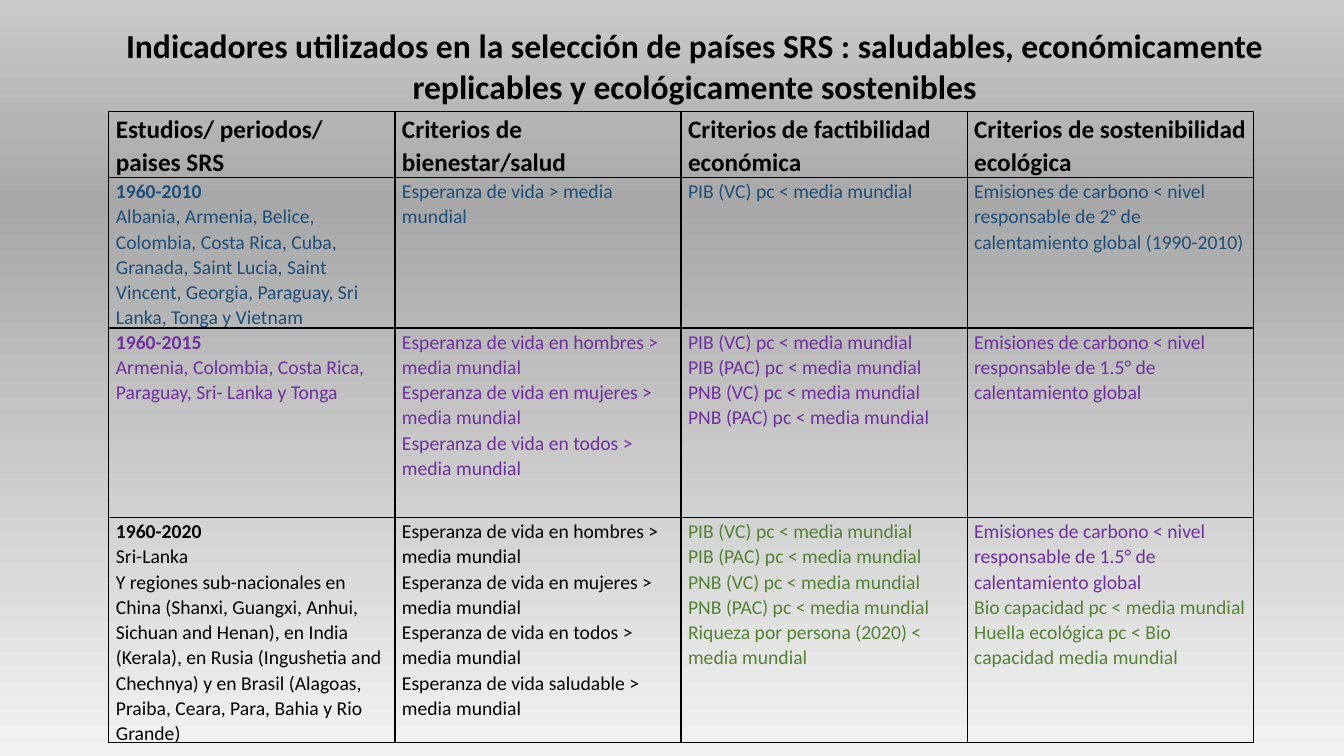
from copy import deepcopy

from lxml.etree import SubElement
from pptx import Presentation
from pptx.dml.color import RGBColor
from pptx.enum.text import MSO_AUTO_SIZE, PP_ALIGN
from pptx.oxml.ns import qn
from pptx.util import Inches, Pt

BLACK, BLUE, PURPLE, GREEN = "000000", "1F4E79", "7030A0", "548235"


def color(hex_string):
    return RGBColor.from_string(hex_string)


def write(paragraph, text, size, hex_string, bold):
    run = paragraph.add_run()
    run.text = text
    run.font.color.rgb = color(hex_string)
    font_format = {"name": "Calibri", "size": Pt(size), "bold": bold}
    for attribute, value in font_format.items():
        setattr(run.font, attribute, value)


presentation = Presentation()
presentation.slide_width = Inches(13.33)
presentation.slide_height = Inches(7.5)
slide = presentation.slides.add_slide(presentation.slide_layouts[6])

# Background: three-stop vertical gradient
background_fill = slide.background.fill
background_fill.gradient()
background_fill.gradient_angle = 90
stop_list = next(slide.element.iter(qn("a:gsLst")))
stop_list.append(deepcopy(stop_list[-1]))
gradient = [(0, "F2F2F2"), (0.73, "A8A8A8"), (1, "C9C9C9")]
for stop, (position, hex_string) in zip(background_fill.gradient_stops, gradient):
    stop.position = position
    stop.color.rgb = color(hex_string)

# Title
title = slide.shapes.add_textbox(Inches(1), Inches(0.2), Inches(11.78), Inches(0.91))
title.text_frame.word_wrap = True
title.text_frame.auto_size = MSO_AUTO_SIZE.SHAPE_TO_FIT_TEXT
title_paragraph = title.text_frame.paragraphs[0]
title_paragraph.alignment = PP_ALIGN.CENTER
write(title_paragraph, "Indicadores utilizados en la selección de países SRS : saludables, "
      "económicamente replicables y ecológicamente sostenibles", 24, BLACK, True)

# Table content: each cell is a list of (text, colour) paragraphs
headers = ["Estudios/ periodos/ paises SRS", "Criterios de bienestar/salud",
           "Criterios de factibilidad económica", "Criterios de sostenibilidad ecológica"]
life_expectancy = [f"Esperanza de vida {group} > media mundial"
                   for group in ("en hombres", "en mujeres", "en todos", "saludable")]
income = [f"{measure} pc < media mundial"
          for measure in ("PIB (VC)", "PIB (PAC)", "PNB (VC)", "PNB (PAC)")]
emissions = "Emisiones de carbono < nivel responsable de {} de calentamiento global"

rows = [
    [[(header, BLACK)] for header in headers],
    [
        [("1960-2010", BLUE),
         ("Albania, Armenia, Belice, Colombia, Costa Rica, Cuba, Granada, Saint Lucia, "
          "Saint Vincent, Georgia, Paraguay, Sri Lanka, Tonga y Vietnam", BLUE)],
        [("Esperanza de vida > media mundial", BLUE)],
        [(income[0], BLUE)],
        [(emissions.format("2°") + " (1990-2010)", BLUE)],
    ],
    [
        [("1960-2015", PURPLE),
         ("Armenia, Colombia, Costa Rica, Paraguay, Sri- Lanka y Tonga", PURPLE)],
        [(text, PURPLE) for text in life_expectancy[:3]],
        [(text, PURPLE) for text in income],
        [(emissions.format("1.5°"), PURPLE)],
    ],
    [
        [("1960-2020", BLACK),
         ("Sri-Lanka", BLACK),
         ("Y regiones sub-nacionales en China (Shanxi, Guangxi, Anhui, Sichuan and Henan), "
          "en India (Kerala), en Rusia (Ingushetia and Chechnya) y en Brasil (Alagoas, "
          "Praiba, Ceara, Para, Bahia y Rio Grande)", BLACK)],
        [(text, BLACK) for text in life_expectancy],
        [(text, GREEN) for text in income + ["Riqueza por persona (2020) < media mundial"]],
        [(emissions.format("1.5°"), PURPLE),
         ("Bio capacidad pc < media mundial", GREEN),
         ("Huella ecológica pc < Bio capacidad media mundial", GREEN)],
    ],
]

# Table grid: four equal columns
row_heights = [0.65, 1.49, 1.88, 2.2]
table_width = 11.35
table = slide.shapes.add_table(len(rows), len(headers), Inches(1.08), Inches(1.11),
                               Inches(table_width), Inches(sum(row_heights))).table
table.first_row = False
table.horz_banding = False
for column in table.columns:
    column.width = Inches(table_width / len(headers))
for row, height in zip(table.rows, row_heights):
    row.height = Inches(height)

# Table cells
cell_format = {"margin_left": Inches(0.07), "margin_top": Inches(0.01),
               "margin_right": Inches(0.07), "margin_bottom": 0}
for row_index, row_cells in enumerate(rows):
    for column_index, entries in enumerate(row_cells):
        cell = table.cell(row_index, column_index)
        for attribute, value in cell_format.items():
            setattr(cell, attribute, value)

        # Borders come before the fill in the cell properties
        properties = cell._tc.get_or_add_tcPr()
        for side in ("a:lnL", "a:lnR", "a:lnT", "a:lnB"):
            border = SubElement(properties, qn(side), w=str(Pt(1)))
            border_fill = SubElement(border, qn("a:solidFill"))
            SubElement(border_fill, qn("a:srgbClr"), val=BLACK)
        cell.fill.background()

        for index, (text, hex_string) in enumerate(entries):
            frame = cell.text_frame
            paragraph = frame.add_paragraph() if index else frame.paragraphs[0]
            paragraph.line_spacing = 1.06
            is_header = row_index == 0
            is_period = column_index == 0 and index == 0
            write(paragraph, text, 18 if is_header else 14, hex_string,
                  is_header or is_period)

presentation.save("out.pptx")
